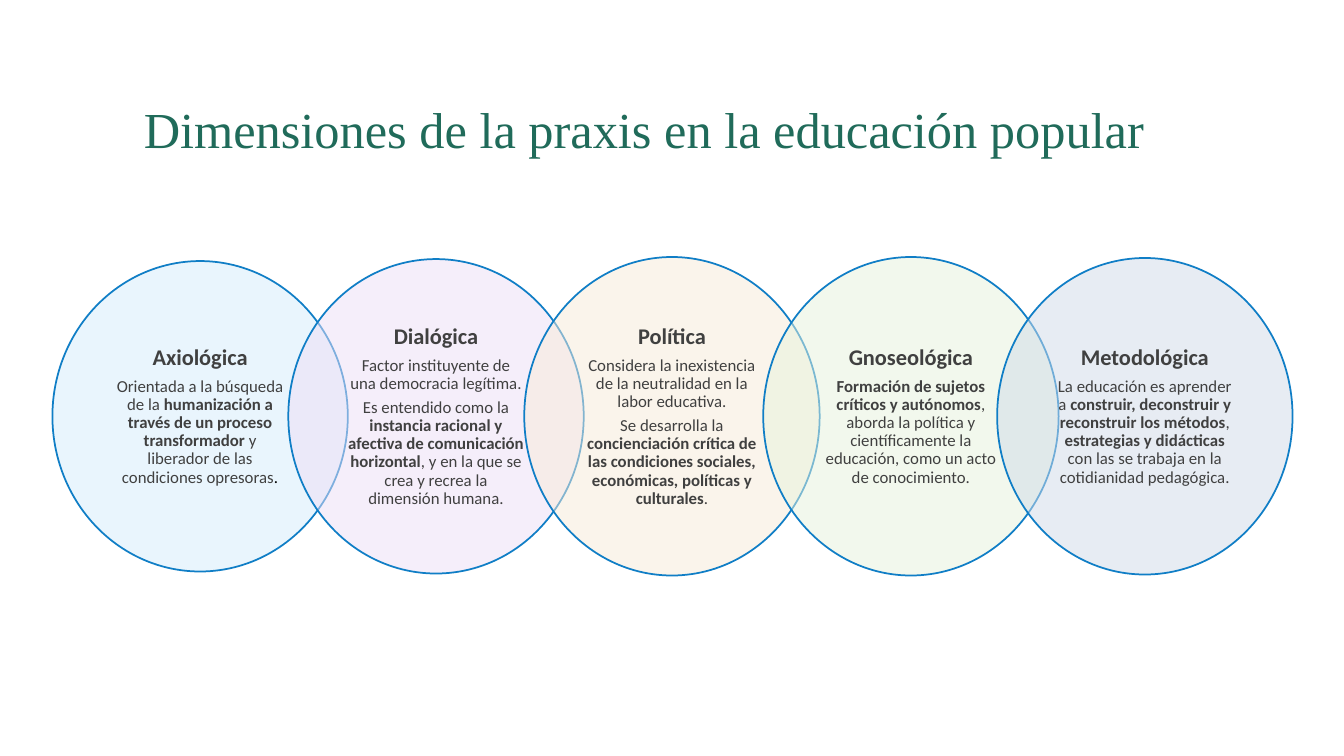
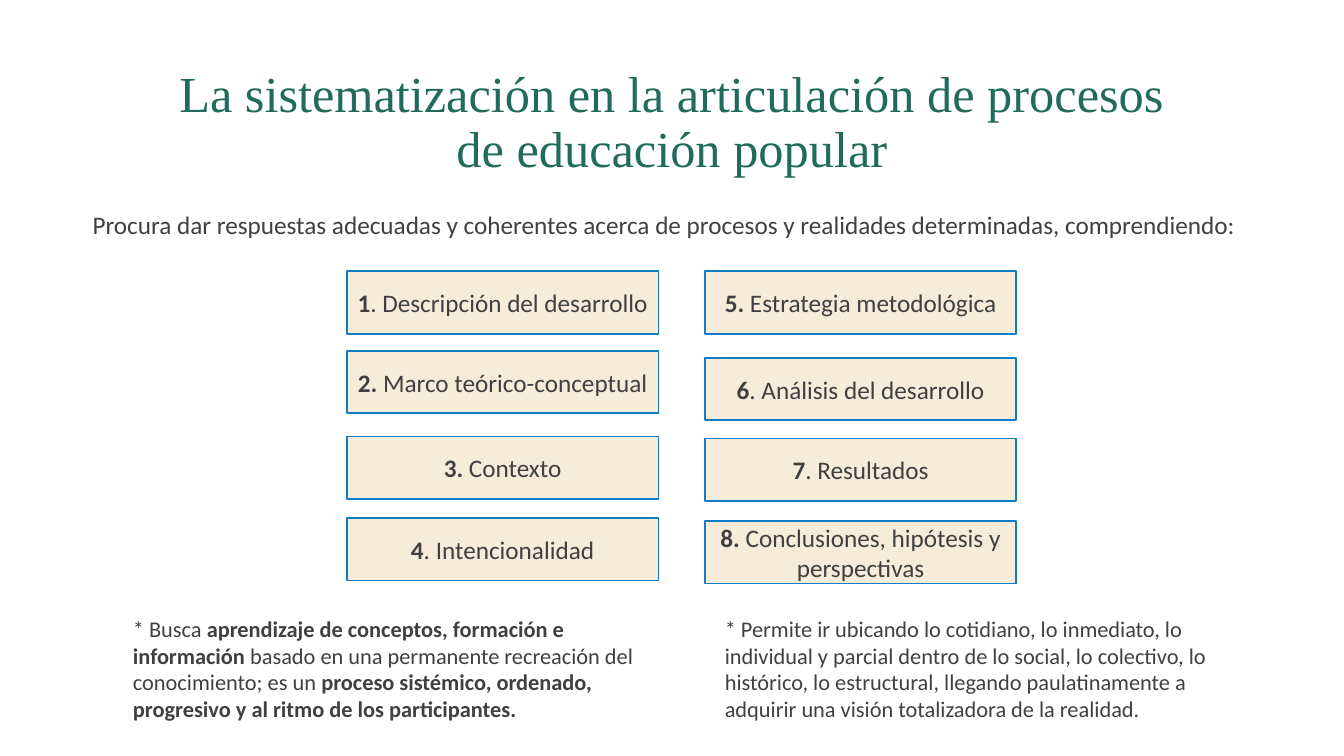
import pptx
import pptx.util
import pptx.dml.color
import pptx.enum.shapes
import pptx.enum.text
import pptx.oxml
import pptx.oxml.ns
from pptx.util import Inches, Pt

SHAPE = pptx.enum.shapes.MSO_SHAPE
ALIGN = pptx.enum.text.PP_ALIGN
ANCHOR = pptx.enum.text.MSO_ANCHOR

GREEN, BLUE, GREY, SAND = "206B5A", "107EC6", "404040", "F7EBD9"
BODY_FONT, TITLE_FONT = "Calibri", "Times New Roman"

# Content: **...** marks bold text
DIMENSIONS_TITLE = "Dimensiones de la praxis en la educación popular"
# heading, paragraphs, fill, left, height
DIMENSIONS = [
    ("Axiológica",
     ["Orientada a la búsqueda de la **humanización a través de un proceso "
      "transformador** y liberador de las condiciones opresoras"],
     "D5EDFC", 0.52, 3.08),
    ("Dialógica",
     ["Factor instituyente de una democracia legítima.",
      "Es entendido como la **instancia racional y afectiva de comunicación "
      "horizontal**, y en la que se crea y recrea la dimensión humana."],
     "EDDFF6", 2.86, 3.12),
    ("Política",
     ["Considera la inexistencia de la neutralidad en la labor educativa.",
      "Se desarrolla la **concienciación crítica de las condiciones sociales, "
      "económicas, políticas y culturales**."],
     SAND, 5.2, 3.16),
    ("Gnoseológica",
     ["**Formación de sujetos críticos y autónomos**, aborda la política y "
      "científicamente la educación, como un acto de conocimiento."],
     "E7F3DD", 7.57, 3.16),
    ("Metodológica",
     ["La educación es aprender a **construir, deconstruir y reconstruir los "
      "métodos**, **estrategias y didácticas** con las se trabaja en la "
      "cotidianidad pedagógica."],
     "D0DBE9", 9.89, 3.14),
]

PROCESS_TITLE = ("La sistematización en la articulación de procesos "
                 "de educación popular")
PROCESS_INTRO = ("Procura dar respuestas adecuadas y coherentes acerca de "
                 "procesos y realidades determinadas, comprendiendo:")
# column left, then (top, text) for each step
STEP_COLUMNS = [
    (3.44, [(2.69, "**1**. Descripción del desarrollo"),
            (3.48, "**2.** Marco teórico-conceptual"),
            (4.33, "**3.** Contexto"),
            (5.14, "**4**. Intencionalidad")]),
    (6.99, [(2.69, "**5.** Estrategia metodológica"),
            (3.55, "**6**. Análisis del desarrollo"),
            (4.35, "**7**. Resultados"),
            (5.17, "**8.** Conclusiones, hipótesis y perspectivas")]),
]
NOTES = [
    (1.22, "* Busca **aprendizaje de conceptos, formación e información** "
           "basado en una permanente recreación del conocimiento; es un "
           "**proceso sistémico, ordenado, progresivo y al ritmo de los "
           "participantes.**"),
    (7.09, "* Permite ir ubicando lo cotidiano, lo inmediato, lo individual y "
           "parcial dentro de lo social, lo colectivo, lo histórico, lo "
           "estructural, llegando paulatinamente a adquirir una visión "
           "totalizadora de la realidad."),
]


def rgb(color):
    return pptx.dml.color.RGBColor.from_string(color)


def add_run(p, text, size, font=BODY_FONT, color=GREY, bold=False):
    r = p.add_run()
    r.text = text
    r.font.size, r.font.name, r.font.bold = Pt(size), font, bold
    r.font.color.rgb = rgb(color)


def write(p, text, size=18, align=ALIGN.CENTER, spacing=None, after=0, **fmt):
    """Fill a paragraph, setting the parts between ** marks in bold."""
    p.alignment, p.line_spacing, p.space_after = align, spacing, Pt(after)
    for i, part in enumerate(text.split("**")):
        if part:
            add_run(p, part, size, bold=i % 2 == 1, **fmt)


def add_box(s, left, top, width, height, anchor=ANCHOR.TOP):
    tf = s.shapes.add_textbox(Inches(left), Inches(top), Inches(width),
                              Inches(height)).text_frame
    tf.word_wrap, tf.vertical_anchor = True, anchor
    return tf


def add_outlined(s, kind, left, top, width, height, fill, alpha=None):
    sp = s.shapes.add_shape(kind, Inches(left), Inches(top), Inches(width),
                            Inches(height))
    sp.shadow.inherit = False
    sp.fill.solid()
    sp.fill.fore_color.rgb = rgb(fill)
    sp.line.color.rgb, sp.line.width = rgb(BLUE), Pt(1.25)
    if alpha:
        clr = sp.fill._xPr.find(".//" + pptx.oxml.ns.qn("a:srgbClr"))
        tag = pptx.oxml.ns.qn("a:alpha")
        clr.append(clr.makeelement(tag, {"val": str(alpha * 1000)}))
    return sp


def add_title(s, text, left, top, width):
    tf = add_box(s, left, top, width, 1.25, ANCHOR.MIDDLE)
    write(tf.paragraphs[0], text, size=36, spacing=0.9, font=TITLE_FONT,
          color=GREEN)


def build_dimensions(s):
    add_title(s, DIMENSIONS_TITLE, 0, 0.69, 12.78)
    middle, diameter, text_width, text_height = 4.13, 2.93, 2.07, 2.22
    for heading, paragraphs, fill, left, height in DIMENSIONS:
        add_outlined(s, SHAPE.OVAL, left, middle - height / 2, diameter,
                     height, fill, alpha=50)
        tf = add_box(s, left + (diameter - text_width) / 2,
                     middle - text_height / 2, text_width, text_height,
                     ANCHOR.MIDDLE)
        tf.margin_left = tf.margin_right = Inches(0.16)
        tf.margin_top = tf.margin_bottom = Inches(0.02)
        write(tf.paragraphs[0], f"**{heading}**", size=16, spacing=0.9,
              after=5.6)
        for text in paragraphs:
            write(tf.add_paragraph(), text, size=12, spacing=0.9, after=4.2)
        if heading == "Axiológica":  # black full stop
            add_run(tf.paragraphs[-1], ".", 12, color="000000")


def build_process(s):
    add_title(s, PROCESS_TITLE, 1.43, 0.6, 10.47)
    intro = add_box(s, 0.82, 2.03, 11.7, 0.4)
    write(intro.paragraphs[0], PROCESS_INTRO, align=ALIGN.JUSTIFY)
    # Numbered steps
    for left, steps in STEP_COLUMNS:
        for top, text in steps:
            sp = add_outlined(s, SHAPE.RECTANGLE, left, top, 3.09, 0.62, SAND)
            tf = sp.text_frame
            tf.word_wrap, tf.vertical_anchor = True, ANCHOR.MIDDLE
            write(tf.paragraphs[0], text)
    # Closing notes
    for left, text in NOTES:
        tf = add_box(s, left, 6.05, 5.32, 1.18)
        write(tf.paragraphs[0], text, size=16, align=ALIGN.LEFT)


def main():
    prs = pptx.Presentation()
    prs.slide_width, prs.slide_height = Inches(13.33), Inches(7.5)
    for build in (build_dimensions, build_process):
        build(prs.slides.add_slide(prs.slide_layouts[6]))
    prs.save("out.pptx")


if __name__ == "__main__":
    main()
